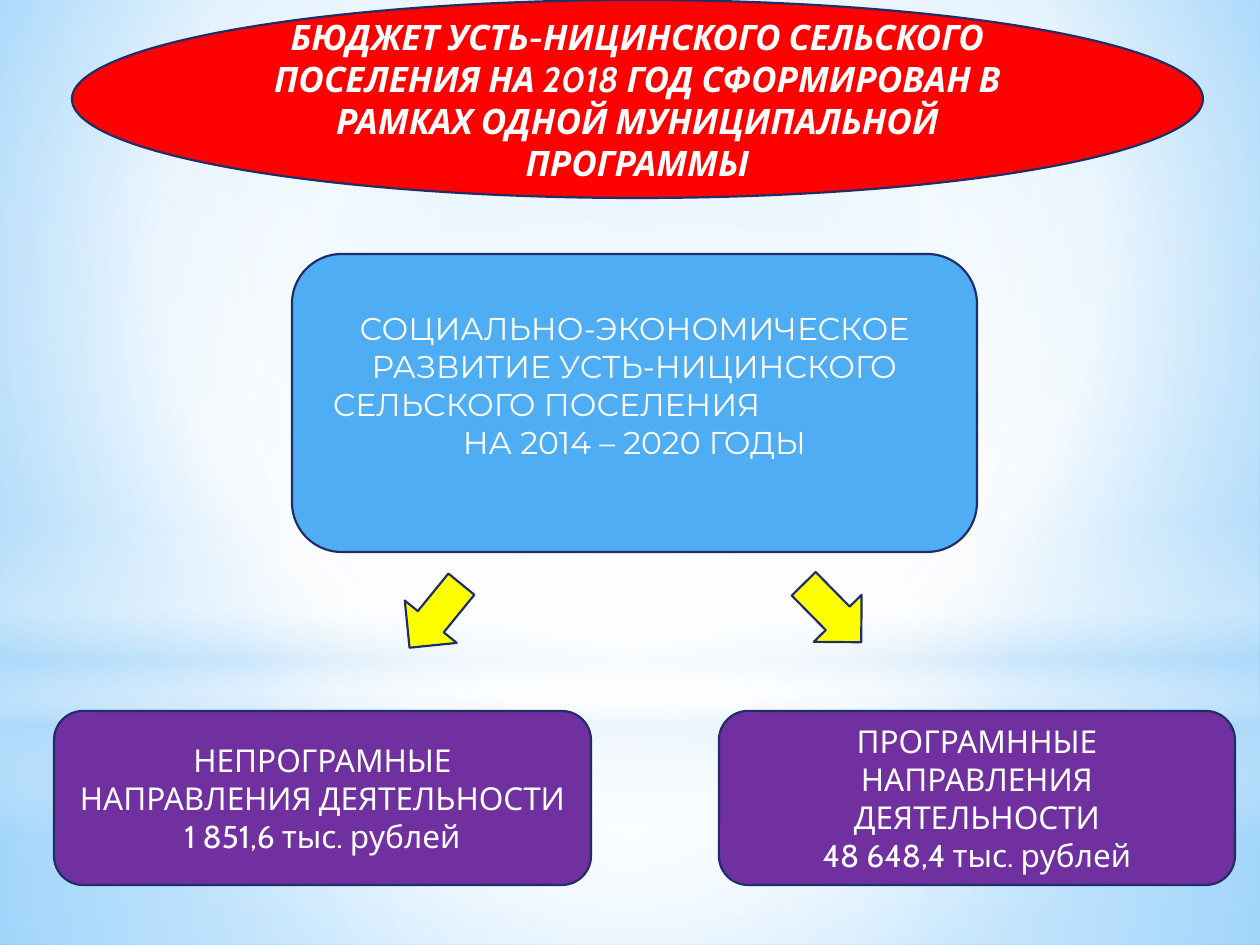
from dataclasses import dataclass
from typing import Optional

from pptx import Presentation
from pptx.dml.color import RGBColor
from pptx.enum.shapes import MSO_SHAPE as Preset
from pptx.enum.text import MSO_ANCHOR as Anchor, PP_ALIGN as Align
from pptx.oxml import parse_xml
from pptx.oxml.ns import nsdecls
from pptx.util import Emu, Pt

EMU_PER_PX = 914400 / 126
COLORS = {
    "white": "FFFFFF", "mist": "B4DCFA", "sky": "9ED5FF", "azure": "5BB9FF",
    "navy": "1F2E69", "red": "FF0000", "blue": "4FADF3",
    "purple": "7030A0", "yellow": "FFFF00",
}


@dataclass(frozen=True)
class Box:
    left: int
    top: int
    width: int
    height: int


@dataclass(frozen=True)
class Gradient:
    stops: tuple  # (position %, color name, opacity %)
    focus: Optional[tuple] = (50, 50, 50, 50)  # None gives a vertical gradient


@dataclass(frozen=True)
class Glow:
    box: Box
    preset: Preset
    gradient: Gradient


@dataclass(frozen=True)
class Line:
    text: str
    align: Align = Align.CENTER
    indent: int = 0


@dataclass(frozen=True)
class Card:
    box: Box
    preset: Preset
    color: str
    lines: tuple
    font: str = "Cabin"
    size: int = 18
    strong: bool = False
    bottom_inset: int = 6


@dataclass(frozen=True)
class Arrow:
    box: Box
    rotation: float


BACKDROP = Gradient(((0, "sky", 100), (60, "white", 100), (100, "azure", 100)),
                    focus=(20, 10, 20, 60))
GLOWS = (
    Glow(Box(0, 703, 1260, 242), Preset.RECTANGLE,
         Gradient(((0, "white", 91), (37, "white", 76), (100, "mist", 79)))),
    Glow(Box(0, 0, 1260, 703), Preset.RECTANGLE,
         Gradient(((0, "white", 89), (48, "white", 62), (100, "mist", 79)))),
    Glow(Box(0, 519, 1260, 315), Preset.RECTANGLE,
         Gradient(((0, "white", 0), (29, "white", 30), (45, "mist", 40),
                   (55, "white", 26), (65, "mist", 60), (100, "white", 0)),
                  focus=None)),
    Glow(Box(0, 220, 1260, 703), Preset.OVAL,
         Gradient(((0, "white", 100), (56, "white", 0)))),
)
CARDS = (
    Card(Box(72, 0, 1131, 198), Preset.OVAL, "red",
         (Line("БЮДЖЕТ УСТЬ-НИЦИНСКОГО СЕЛЬСКОГО ПОСЕЛЕНИЯ НА 2018 ГОД "
               "СФОРМИРОВАН В РАМКАХ ОДНОЙ МУНИЦИПАЛЬНОЙ ПРОГРАММЫ"),),
         size=20, strong=True),
    Card(Box(292, 254, 685, 298), Preset.ROUNDED_RECTANGLE, "blue",
         (Line("СОЦИАЛЬНО-ЭКОНОМИЧЕСКОЕ РАЗВИТИЕ УСТЬ-НИЦИНСКОГО"),
          Line("СЕЛЬСКОГО ПОСЕЛЕНИЯ", Align.LEFT, indent=14),
          Line("НА 2014 – 2020 ГОДЫ")),
         font="Montserrat", bottom_inset=42),
    Card(Box(54, 711, 537, 174), Preset.ROUNDED_RECTANGLE, "purple",
         (Line("НЕПРОГРАМНЫЕ НАПРАВЛЕНИЯ ДЕЯТЕЛЬНОСТИ"),
          Line("1 851,6 тыс. рублей"))),
    Card(Box(719, 711, 516, 174), Preset.ROUNDED_RECTANGLE, "purple",
         (Line("ПРОГРАМННЫЕ НАПРАВЛЕНИЯ ДЕЯТЕЛЬНОСТИ"),
          Line("48 648,4 тыс. рублей"))),
)
ARROWS = (Arrow(Box(402, 575, 67, 82), 39.2), Arrow(Box(799, 572, 67, 82), 315.5))


def px(length: int) -> Emu:
    return Emu(round(length * EMU_PER_PX))


def rgb(name: str) -> RGBColor:
    return RGBColor.from_string(COLORS[name])


def add_preset(slide, preset: Preset, box: Box):
    shape = slide.shapes.add_shape(
        preset, px(box.left), px(box.top), px(box.width), px(box.height))
    shape.shadow.inherit = False
    return shape


def paint_solid(shape, color: str) -> None:
    shape.fill.solid()
    shape.fill.fore_color.rgb = rgb(color)
    shape.line.color.rgb = rgb("navy")
    shape.line.width = Pt(1.25)


def paint_gradient(owner, element, gradient: Gradient) -> None:
    """Put the gradient where the owner's empty fill stands."""
    owner.fill.background()
    stops = "".join(
        f'<a:gs pos="{position * 1000}"><a:srgbClr val="{COLORS[color]}">'
        f'<a:alpha val="{opacity * 1000}"/></a:srgbClr></a:gs>'
        for position, color, opacity in gradient.stops)
    if gradient.focus is None:
        direction = '<a:lin ang="5400000" scaled="0"/>'
    else:
        sides = " ".join(f'{side}="{share * 1000}"'
                         for side, share in zip("ltrb", gradient.focus))
        direction = f'<a:path path="circle"><a:fillToRect {sides}/></a:path>'
    empty_fill = element.xpath(".//a:noFill")[0]
    empty_fill.getparent().replace(empty_fill, parse_xml(
        f'<a:gradFill {nsdecls("a")} rotWithShape="1">'
        f'<a:gsLst>{stops}</a:gsLst>{direction}</a:gradFill>'))


def write(paragraph, text: str, *, font: str, size: int, color: str = "white",
          strong: bool = False, align: Align = Align.CENTER, indent: int = 0) -> None:
    paragraph.alignment = align
    if indent:
        paragraph._p.get_or_add_pPr().set("marL", str(px(indent)))
    run = paragraph.add_run()
    run.text = text
    run.font.name = font
    run.font.size = Pt(size)
    run.font.bold = run.font.italic = strong
    run.font.color.rgb = rgb(color)


def draw_glow(slide, glow: Glow) -> None:
    shape = add_preset(slide, glow.preset, glow.box)
    shape.line.fill.background()
    paint_gradient(shape, shape._element, glow.gradient)


def draw_card(slide, card: Card) -> None:
    shape = add_preset(slide, card.preset, card.box)
    paint_solid(shape, card.color)
    frame = shape.text_frame
    frame.word_wrap = True
    frame.vertical_anchor = Anchor.MIDDLE
    frame.margin_bottom = px(card.bottom_inset)
    for index, line in enumerate(card.lines):
        paragraph = frame.add_paragraph() if index else frame.paragraphs[0]
        write(paragraph, line.text, font=card.font, size=card.size,
              strong=card.strong, align=line.align, indent=line.indent)


def draw_arrow(slide, arrow: Arrow) -> None:
    shape = add_preset(slide, Preset.DOWN_ARROW, arrow.box)
    paint_solid(shape, "yellow")
    shape.rotation = arrow.rotation


def main() -> None:
    deck = Presentation()
    deck.slide_width, deck.slide_height = px(1260), px(945)
    slide = deck.slides.add_slide(deck.slide_layouts[6])

    # Backdrop and its soft light
    paint_gradient(slide.background, slide._element, BACKDROP)
    for glow in GLOWS:
        draw_glow(slide, glow)

    # Title, programme and its two spending directions
    for card in CARDS:
        draw_card(slide, card)

    # Arrows from the programme to the directions
    for arrow in ARROWS:
        draw_arrow(slide, arrow)

    deck.save("out.pptx")


if __name__ == "__main__":
    main()
